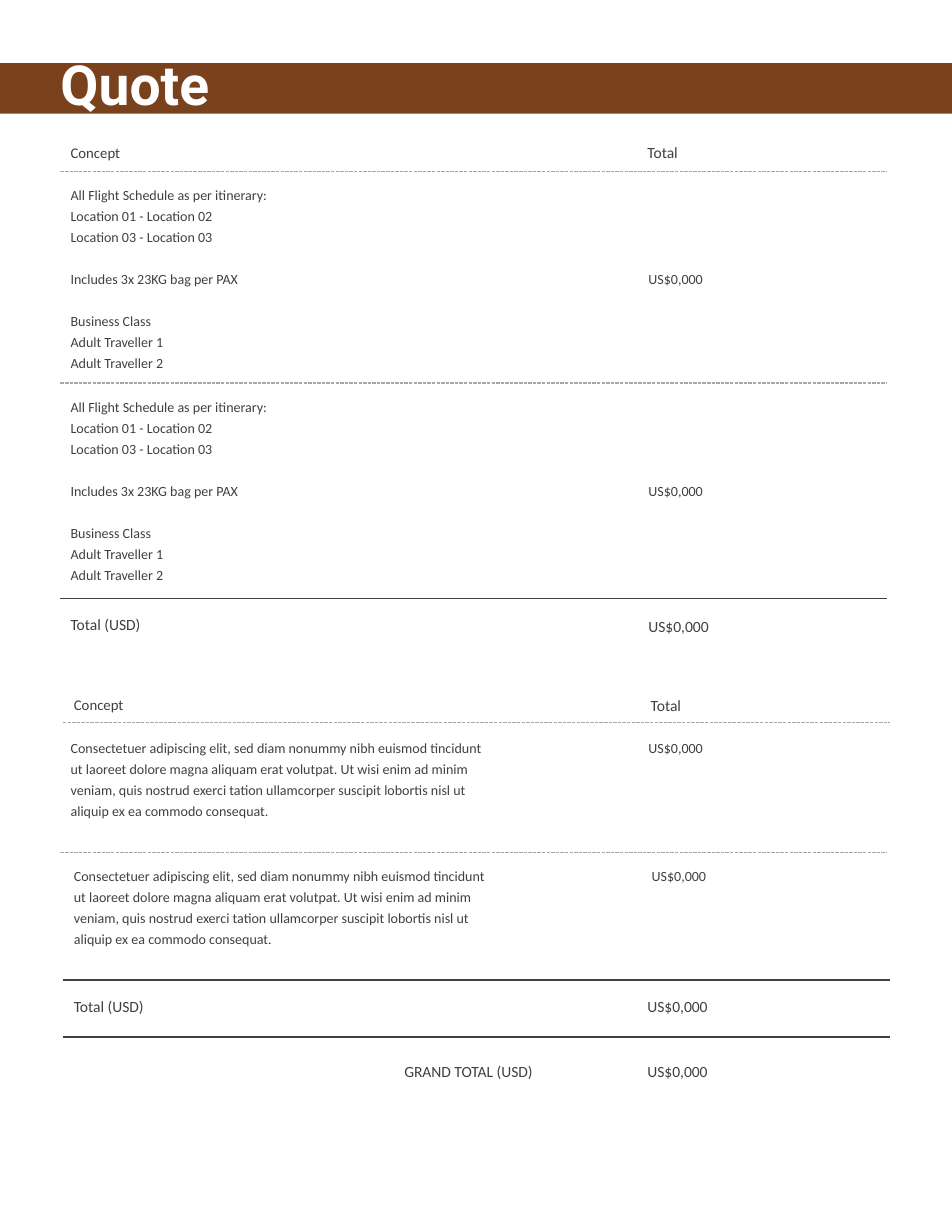
"""Build a one-page travel quote with two priced sections and a grand total."""
import pptx
import pptx.dml.color
import pptx.enum.dml
import pptx.enum.shapes
import pptx.enum.text
import pptx.util
import lxml.etree

Pt = pptx.util.Pt
COLORS = {"band": "79411C", "title": "FFFFFF", "text": "404040", "dash": "A6A6A6"}
PAGE_WIDTH, PAGE_HEIGHT = 612, 792
RULE_LEFT, RULE_WIDTH = 38.9, 531.4
LABEL_LEFT, PRICE_LEFT = 45.4, 416.9
SHIFT = 2.1

STYLES = {
    "title": {"font": "Roboto", "size": 35.5, "leading": 29.1, "color": "title", "bold": True},
    "concept": {"size": 9.5, "leading": 18.4, "justify": True},
    "total": {"size": 10, "leading": 19.4, "justify": True},
    "body": {"size": 9, "leading": 13.5},
    "sum": {"size": 10, "leading": 15},
}

FLIGHT = [
    ["All Flight Schedule as per itinerary:", "Location 01 - Location 02", "Location 03 - Location 03"],
    ["Includes 3x 23KG bag per PAX"],
    ["Business Class", "Adult Traveller 1", "Adult Traveller 2"],
]
SERVICE = [[
    "Consectetuer adipiscing elit, sed diam nonummy nibh euismod tincidunt ut laoreet dolore "
    "magna aliquam erat volutpat. Ut wisi enim ad minim veniam, quis nostrud exerci tation "
    "ullamcorper suscipit lobortis nisl ut aliquip ex ea commodo consequat."
]]
PRICE = [["US$0,000"]]
SUM_LABEL = [["Total (USD)"]]

HEADINGS = [(85.3, 0), (440.3, SHIFT)]
FLIGHT_TOPS = [117.4, 253.4]
FLIGHT_PRICE_DROP = 54
SERVICES = [(473, 0), (555.1, SHIFT)]
TEXTS = [
    (SUM_LABEL, LABEL_LEFT, 392.4, 60.5, "sum"),
    (PRICE, PRICE_LEFT, 393.8, 60.5, "sum"),
    (SUM_LABEL, LABEL_LEFT + SHIFT, 637.9, 60.5, "sum"),
    (PRICE, PRICE_LEFT - 0.7, 637.9, 60.5, "sum"),
    ([["GRAND TOTAL (USD)"]], 259.9, 679.7, 117.4, "sum"),
    (PRICE, PRICE_LEFT - 0.7, 679.7, 60.5, "sum"),
]
RULES = [
    (110, 0, True), (246.2, 0, True), (384.5, 0, False), (464.4, 1.6, True),
    (547.9, 0, True), (630, 1.6, False), (666.7, 1.6, False),
]


def rgb(name):
    return pptx.dml.color.RGBColor.from_string(COLORS[name])


def add_text(page, groups, left, top, width, style_name, height=None):
    style = STYLES[style_name]
    leading = style["leading"]
    if height is None:
        lines = sum(len(group) for group in groups) + len(groups) - 1
        height = lines * leading + 0.9
        if groups is SERVICE:
            height = 4 * leading + 0.9
    box = page.shapes.add_textbox(Pt(left), Pt(top), Pt(width), Pt(height))
    frame = box.text_frame
    frame.word_wrap = True
    frame.margin_left = frame.margin_right = frame.margin_top = frame.margin_bottom = 0
    para = None
    for group in groups:
        for index, line in enumerate(group):
            starts_later_group = para is not None and index == 0
            para = frame.paragraphs[0] if para is None else frame.add_paragraph()
            para.line_spacing = Pt(leading)
            if starts_later_group:
                para.space_before = Pt(leading)
            if style.get("justify"):
                para.alignment = pptx.enum.text.PP_ALIGN.JUSTIFY
            span = para.add_run()
            span.text = line
            span.font.name = style.get("font", "Calibri")
            span.font.size = Pt(style["size"])
            span.font.bold = style.get("bold", False)
            span.font.color.rgb = rgb(style.get("color", "text"))


def add_rule(page, top, shift, dashed):
    left = RULE_LEFT + shift
    rule = page.shapes.add_connector(
        pptx.enum.shapes.MSO_CONNECTOR.STRAIGHT, Pt(left), Pt(top), Pt(left + RULE_WIDTH), Pt(top))
    rule.line.width = Pt(0.75)
    rule.line.color.rgb = rgb("dash" if dashed else "text")
    if dashed:
        rule.line.dash_style = pptx.enum.dml.MSO_LINE.SQUARE_DOT
    properties = rule.element.spPr
    lxml.etree.SubElement(properties, "{http://schemas.openxmlformats.org/drawingml/2006/main}effectLst")


def main():
    deck = pptx.Presentation()
    deck.slide_width, deck.slide_height = Pt(PAGE_WIDTH), Pt(PAGE_HEIGHT)
    page = deck.slides.add_slide(deck.slide_layouts[6])

    band = page.shapes.add_shape(
        pptx.enum.shapes.MSO_SHAPE.RECTANGLE, 0, Pt(40.5), Pt(PAGE_WIDTH), Pt(32.5))
    band.shadow.inherit = False
    band.fill.solid()
    band.fill.fore_color.rgb = rgb("band")
    band.line.fill.background()
    add_text(page, [["Quote"]], RULE_LEFT, 46.1, 402.5, "title", 38.2)

    for top, shift in HEADINGS:
        add_text(page, [["Concept"]], LABEL_LEFT + shift, top, 37.4, "concept")
        add_text(page, [["Total"]], PRICE_LEFT - 0.7 + shift, top - 0.5, 37.4, "total")
    for top in FLIGHT_TOPS:
        add_text(page, FLIGHT, LABEL_LEFT, top, 213.8, "body")
        add_text(page, PRICE, PRICE_LEFT, top + FLIGHT_PRICE_DROP, 60.5, "body")
    for top, shift in SERVICES:
        add_text(page, SERVICE, LABEL_LEFT + shift, top, 267.8, "body")
        add_text(page, PRICE, PRICE_LEFT + shift, top, 60.5, "body")
    for item in TEXTS:
        add_text(page, *item)
    for rule in RULES:
        add_rule(page, *rule)
    deck.save("out.pptx")


if __name__ == "__main__":
    main()
